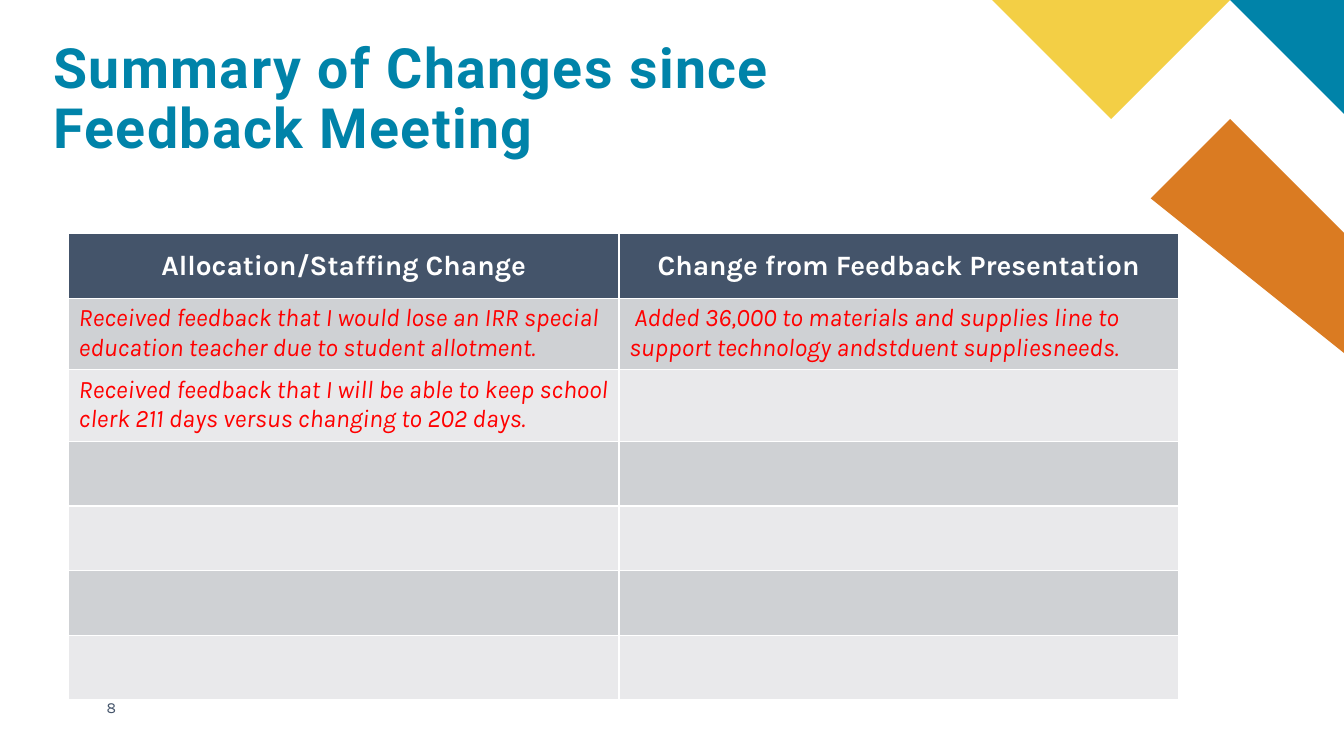
import pptx
import pptx.dml.color
import pptx.enum.text
import pptx.util

Cm = pptx.util.Cm
ANCHOR = pptx.enum.text.MSO_ANCHOR
ALIGN = pptx.enum.text.PP_ALIGN

TEAL, ORANGE, YELLOW = "0083A9", "DA7B22", "F3CF45"
SLATE, WHITE, RED = "44546A", "FFFFFF", "FF0000"
BANDS = ["CFD1D4", "E9E9EB"]

CORNER_SHAPES = [
    (ORANGE, [(33.87, 9.24), (33.87, 6.12), (30.78, 3.02), (29.21, 4.57)]),
    (TEAL, [(33.87, 3.02), (33.87, 0), (30.86, 0)]),
    (YELLOW, [(24.64, 0), (27.66, 3.02), (30.71, 0)]),
]
HEADINGS = ["Allocation/Staffing Change", "Change from Feedback Presentation"]
CHANGES = [
    ["Received feedback that I would lose an IRR special education teacher due to student allotment.",
     " Added 36,000 to materials and supplies line to support technology andstduent suppliesneeds."],
    ["Received feedback that I will be able to keep school clerk 211 days versus changing to 202 days.", ""],
] + [["", ""]] * 4


def rgb(code):
    return pptx.dml.color.RGBColor.from_string(code)


class SlideBuilder:
    heading_font = "Roboto"
    body_font = "Karla"

    def __init__(self, slide):
        self.slide = slide

    def style(self, paragraph, name, size, color, bold=False, italic=False, align=ALIGN.LEFT):
        font = paragraph.font
        font.name, font.size = name, pptx.util.Pt(size)
        font.bold, font.italic = bold, italic
        font.color.rgb = rgb(color)
        paragraph.alignment = align

    def clear_margins(self, frame):
        frame.margin_left = frame.margin_right = frame.margin_top = frame.margin_bottom = 0
        frame.word_wrap = True

    def polygon(self, color, points):
        builder = self.slide.shapes.build_freeform(*points[0], scale=Cm(1))
        builder.add_line_segments(points[1:], close=True)
        shape = builder.convert_to_shape()
        shape.shadow.inherit = False
        shape.fill.solid()
        shape.fill.fore_color.rgb = rgb(color)
        shape.line.fill.background()

    def title(self, text, left, top, width, height):
        title = self.slide.shapes.title
        title.left, title.top, title.width, title.height = map(Cm, (left, top, width, height))
        frame = title.text_frame
        frame.text = text
        frame.auto_size = pptx.enum.text.MSO_AUTO_SIZE.NONE
        frame.vertical_anchor = ANCHOR.BOTTOM
        self.clear_margins(frame)
        heading = frame.paragraphs[0]
        heading.line_spacing = 0.9
        self.style(heading, self.heading_font, 39.6, TEAL, bold=True)
        heading.runs[0].font._element.set("spc", "100")

    def page_number(self, text, left, top, width, height):
        box = self.slide.shapes.add_textbox(*map(Cm, (left, top, width, height)))
        self.clear_margins(box.text_frame)
        box.text_frame.text = text
        self.style(box.text_frame.paragraphs[0], self.body_font, 11, SLATE)

    def cell(self, cell, text, fill, size, color, **look):
        cell.fill.solid()
        cell.fill.fore_color.rgb = rgb(fill)
        cell.text = text
        self.style(cell.text_frame.paragraphs[0], self.body_font, size, color, **look)

    def table(self, headings, rows, left, top, widths, heights):
        table = self.slide.shapes.add_table(
            len(heights), len(widths), Cm(left), Cm(top), Cm(sum(widths)), Cm(sum(heights))).table
        for column, width in zip(table.columns, widths):
            column.width = Cm(width)
        for row, height in zip(table.rows, heights):
            row.height = Cm(height)
        for c, heading in enumerate(headings):
            self.cell(table.cell(0, c), heading, SLATE, 20, WHITE, bold=True, align=ALIGN.CENTER)
            table.cell(0, c).vertical_anchor = ANCHOR.MIDDLE
        for r, row in enumerate(rows):
            for c, text in enumerate(row):
                self.cell(table.cell(r + 1, c), text, BANDS[r % 2], 18, RED, italic=True)


def main():
    deck = pptx.Presentation()
    deck.slide_width, deck.slide_height = Cm(33.87), Cm(19.05)
    summary = SlideBuilder(deck.slides.add_slide(deck.slide_layouts[5]))
    for color, points in CORNER_SHAPES:
        summary.polygon(color, points)
    summary.title("Summary of Changes since Feedback Meeting", 1.35, 1.14, 22.94, 2.9)
    summary.page_number("8", 2.69, 17.58, 1.45, 0.69)
    summary.table(HEADINGS, CHANGES, 1.73, 5.89, [13.87, 14.1], [1.63] + [1.8] * 2 + [1.63] * 4)
    deck.save("out.pptx")


if __name__ == "__main__":
    main()
